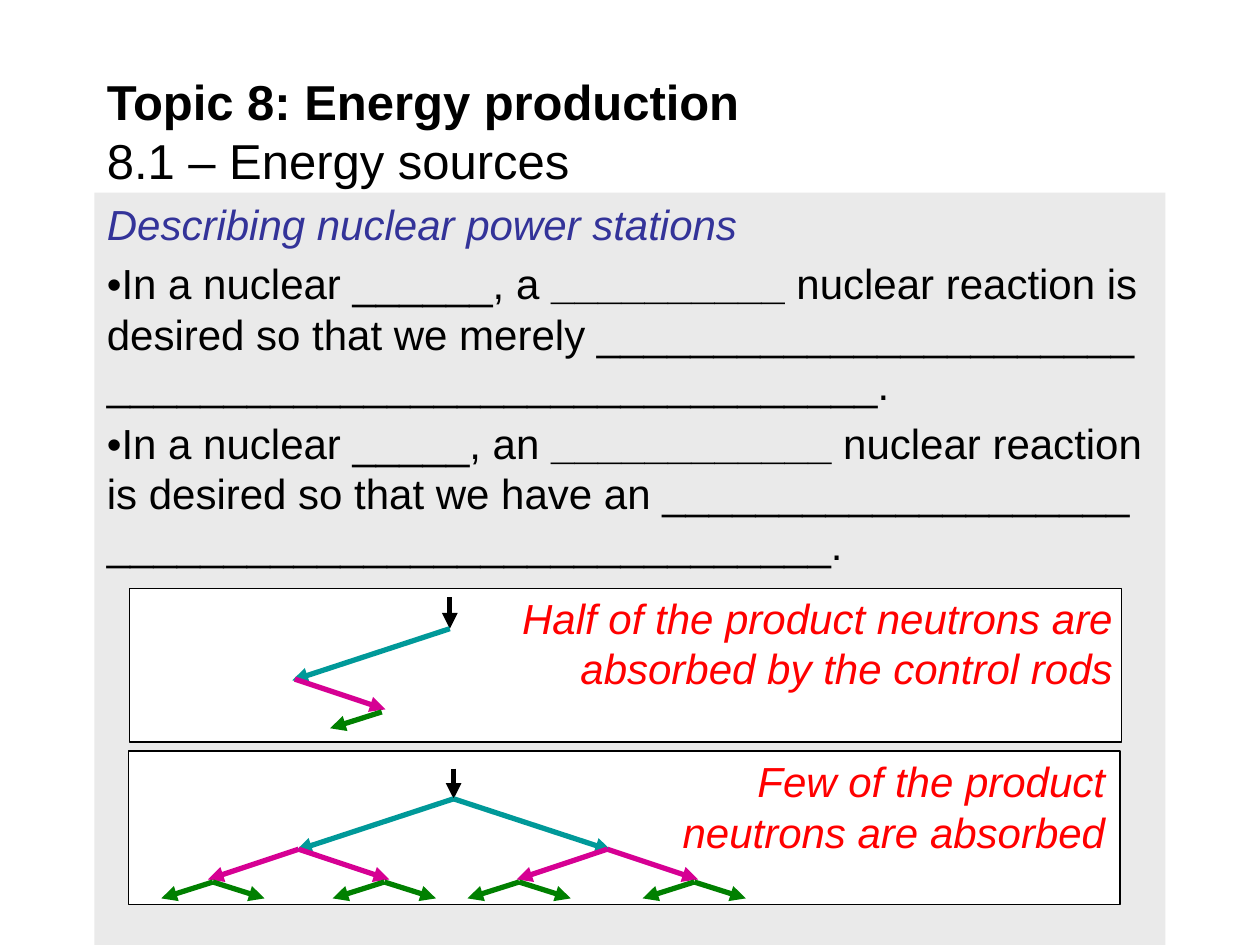
"""Build a slide on nuclear power stations with two chain reaction trees."""
import pptx
import pptx.util
import pptx.dml.color
import pptx.enum.shapes
import pptx.enum.text
import pptx.oxml.ns
import pptx.oxml.xmlchemy

SCALE = 9144
RGB = pptx.dml.color.RGBColor
BLACK = RGB(0x00, 0x00, 0x00)
WHITE = RGB(0xFF, 0xFF, 0xFF)
GREY = RGB(0xEA, 0xEA, 0xEA)
BLUE = RGB(0x33, 0x33, 0x99)
RED = RGB(0xFF, 0x00, 0x00)
TEAL = RGB(0x00, 0x99, 0x99)
PINK = RGB(0xD6, 0x00, 0x93)
GREEN = RGB(0x00, 0x80, 0x00)

ALIGN = pptx.enum.text.PP_ALIGN
ANCHOR = pptx.enum.text.MSO_ANCHOR
BOTH = (-1, 1)
LEVELS = {TEAL: (125, 41), PINK: (72, 24), GREEN: (41, 13)}


def px(*sizes):
    """Turn px lengths into EMU."""
    return [size * SCALE for size in sizes]


def add_run(para, text, size=24, color=BLACK, bold=False, slant=False):
    """Add one styled run to a paragraph."""
    run = para.add_run()
    run.text = text
    font = run.font
    font.name = "Arial"
    font.size = pptx.util.Pt(size)
    font.bold = bold
    font.italic = slant
    font.color.rgb = color


def add_panel(slide, box, fill, line=None):
    """Add a filled rectangle, outlined if a line colour is given."""
    kind = pptx.enum.shapes.MSO_SHAPE.RECTANGLE
    shape = slide.shapes.add_shape(kind, *px(*box))
    shape.shadow.inherit = False
    shape.fill.solid()
    shape.fill.fore_color.rgb = fill
    if line is None:
        shape.line.fill.background()
    else:
        shape.line.color.rgb = line
        shape.line.width = pptx.util.Pt(0.75)
    return shape


def add_label(slide, box):
    """Add a wrapping text box and return its frame."""
    frame = slide.shapes.add_textbox(*px(*box)).text_frame
    frame.word_wrap = True
    return frame


def add_title(slide):
    """Add the two-line heading."""
    frame = add_label(slide, (75, 58, 850, 91))
    frame.vertical_anchor = ANCHOR.MIDDLE
    para = frame.paragraphs[0]
    add_run(para, "Topic 8: Energy production", 28, bold=True)
    para.add_line_break()
    add_run(para, "8.1 – Energy sources", 28)


def add_body(slide):
    """Add the grey panel with its heading and two points."""
    frame = add_panel(slide, (75, 153, 850, 597), GREY).text_frame
    frame.word_wrap = True
    frame.vertical_anchor = ANCHOR.TOP
    head = frame.paragraphs[0]
    head.alignment = ALIGN.LEFT
    add_run(head, "Describing nuclear power stations", color=BLUE, slant=True)
    points = [
        ("•In a nuclear ______, a ", "__________ ",
         "nuclear reaction is desired so that we merely "
         "_______________________ _________________________________."),
        ("•In a nuclear _____, an ", "____________ ",
         "nuclear reaction is desired so that we have an "
         "____________________ _______________________________."),
    ]
    for start, blank, rest in points:
        para = frame.add_paragraph()
        para.alignment = ALIGN.LEFT
        para.space_before = pptx.util.Pt(4.8)
        add_run(para, start)
        add_run(para, blank, bold=True)
        add_run(para, rest)


def add_note(slide, box, text):
    """Add a red right-aligned remark."""
    para = add_label(slide, box).paragraphs[0]
    para.alignment = ALIGN.RIGHT
    add_run(para, text, color=RED, slant=True)


def add_arrow(slide, ends, color):
    """Add a thick line with a triangle at its end."""
    kind = pptx.enum.shapes.MSO_CONNECTOR.STRAIGHT
    arrow = slide.shapes.add_connector(kind, *px(*ends))
    arrow.line.color.rgb = color
    arrow.line.width = pptx.util.Pt(3)
    make = pptx.oxml.xmlchemy.OxmlElement
    tail = make("a:tailEnd")
    tail.set("type", "triangle")
    props = arrow._element.find(pptx.oxml.ns.qn("p:spPr"))
    props.find(pptx.oxml.ns.qn("a:ln")).append(tail)
    props.append(make("a:effectLst"))


def add_fork(slide, x, y, color, sides=BOTH):
    """Add the arrows that leave one fission on the given sides."""
    reach, drop = LEVELS[color]
    for side in sides:
        add_arrow(slide, (x, y, x + side * reach, y + drop), color)


def add_slow(slide):
    """Add the steady reaction, one neutron at each step."""
    add_arrow(slide, (357, 474, 357, 499), BLACK)
    add_fork(slide, 357, 499, TEAL, (-1,))
    add_fork(slide, 234, 539, PINK, (1,))
    add_fork(slide, 303, 565, GREEN, (-1,))


def add_fast(slide):
    """Add the growing reaction, doubling at each step."""
    add_arrow(slide, (360, 610, 360, 634), BLACK)
    add_fork(slide, 360, 634, TEAL)
    for x in (237, 482):
        add_fork(slide, x, 674, PINK)
    for x in (169, 305, 412, 551):
        add_fork(slide, x, 700, GREEN)


def main():
    """Build and save the slide."""
    deck = pptx.Presentation()
    deck.slide_width, deck.slide_height = px(1000, 750)
    slide = deck.slides.add_slide(deck.slide_layouts[6])
    add_body(slide)
    add_panel(slide, (103, 467, 787, 122), WHITE, BLACK)
    add_panel(slide, (102, 596, 787, 122), WHITE, BLACK)
    add_title(slide)
    add_slow(slide)
    add_fast(slide)
    add_note(slide, (392, 465, 501, 90),
             "Half of the product neutrons are absorbed by the control rods")
    add_note(slide, (507, 595, 380, 90),
             "Few of the product neutrons are absorbed")
    deck.save("out.pptx")


if __name__ == "__main__":
    main()
